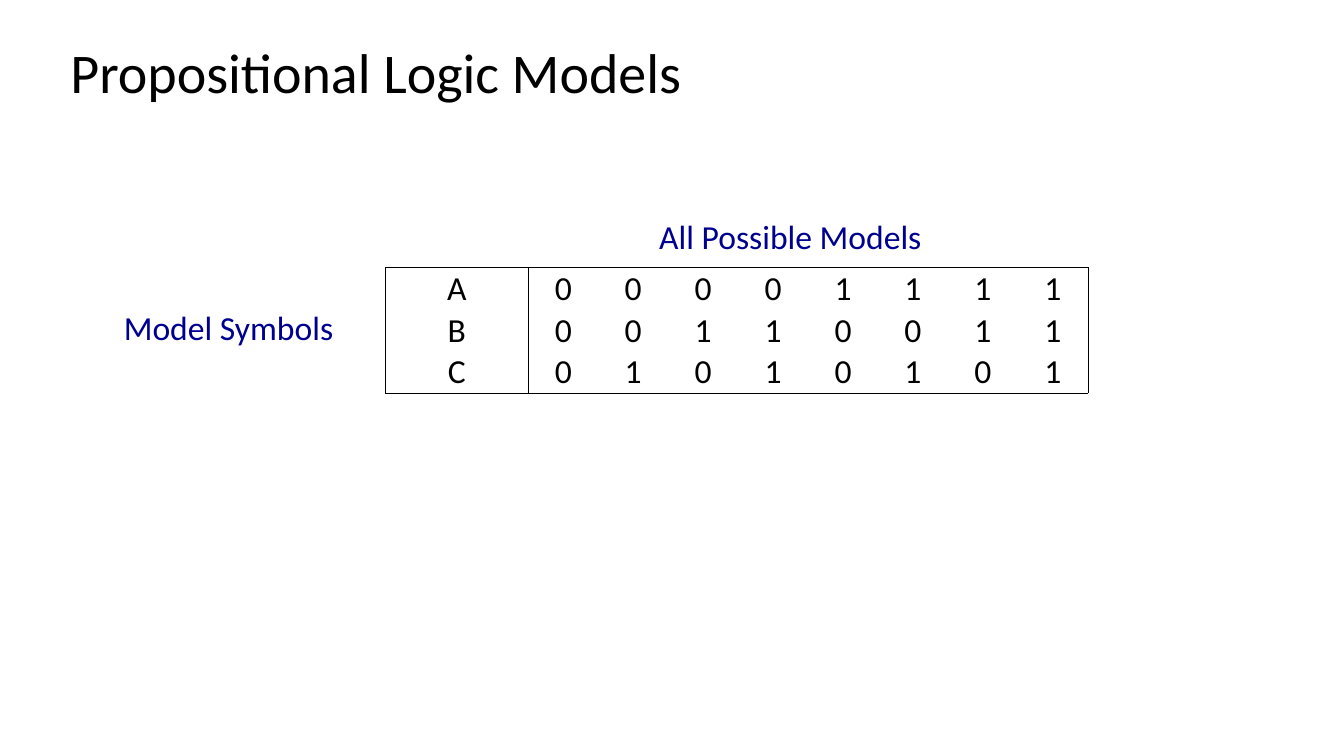
from itertools import product

from lxml import etree
from pptx import Presentation
from pptx.dml.color import RGBColor
from pptx.enum.text import MSO_ANCHOR as Anchor, MSO_AUTO_SIZE as AutoSize, PP_ALIGN as Align
from pptx.oxml.ns import qn
from pptx.util import Inches, Pt

BLACK = RGBColor(0x00, 0x00, 0x00)
NAVY = RGBColor(0x00, 0x00, 0x90)
FONT = "Calibri"
PLAIN_STYLE = "{2D5ABB26-0587-4C30-8999-92F81FD0307C}"

SYMBOLS = "ABC"
MODELS = list(product((0, 1), repeat=len(SYMBOLS)))
SYMBOL_WIDTH = 1.42


def write(para, text, size, color):
    span = para.add_run()
    span.text = text
    for name, value in {"name": FONT, "size": Pt(size)}.items():
        setattr(span.font, name, value)
    span.font.color.rgb = color


def add_text(page, box, text, size, color, frame_format):
    frame = page.shapes.add_textbox(*map(Inches, box)).text_frame
    for name, value in frame_format.items():
        setattr(frame, name, value)
    write(frame.paragraphs[0], text, size, color)
    return frame.paragraphs[0]


def add_title(page, box, text):
    frame_format = {"word_wrap": True, "vertical_anchor": Anchor.MIDDLE}
    para = add_text(page, box, text, 40, BLACK, frame_format)
    para.line_spacing = 0.9


def add_label(page, box, text):
    frame_format = {"word_wrap": False, "auto_size": AutoSize.SHAPE_TO_FIT_TEXT}
    add_text(page, box, text, 24, NAVY, frame_format)


def draw_borders(cell, sides):
    """Draw a thin line on each side named in sides, out of L, R, T and B."""
    properties = cell._tc.get_or_add_tcPr()
    for place, side in enumerate("LRTB"):
        line = etree.Element(qn(f"a:ln{side}"), w=str(Pt(0.5)))
        if side in sides:
            fill = etree.SubElement(line, qn("a:solidFill"))
            etree.SubElement(fill, qn("a:srgbClr"), val=str(BLACK))
        else:
            etree.SubElement(line, qn("a:noFill"))
        properties.insert(place, line)


def add_truth_table(page, box):
    """Place one row per symbol and one column per model."""
    rows, columns = len(SYMBOLS), len(MODELS) + 1
    table = page.shapes.add_table(rows, columns, *map(Inches, box)).table
    table._tbl.tblPr.find(qn("a:tableStyleId")).text = PLAIN_STYLE
    table.first_row = table.horz_banding = False

    model_width = (box[2] - SYMBOL_WIDTH) / len(MODELS)
    for index, column in enumerate(table.columns):
        column.width = Inches(model_width if index else SYMBOL_WIDTH)

    cell_format = {
        "vertical_anchor": Anchor.BOTTOM,
        "margin_left": Inches(0.01),
        "margin_right": Inches(0.01),
        "margin_top": Inches(0.01),
        "margin_bottom": 0,
    }
    for row, column in product(range(rows), range(columns)):
        cell = table.cell(row, column)
        for name, value in cell_format.items():
            setattr(cell, name, value)
        cell.fill.background()
        text = str(MODELS[column - 1][row]) if column else SYMBOLS[row]
        para = cell.text_frame.paragraphs[0]
        para.alignment = Align.CENTER
        write(para, text, 24, BLACK)
        edges = {
            "L": column <= 1,
            "R": column in (0, columns - 1),
            "T": row == 0,
            "B": row == rows - 1,
        }
        draw_borders(cell, [side for side, drawn in edges.items() if drawn])


def main():
    deck = Presentation()
    deck.slide_width, deck.slide_height = Inches(13.33), Inches(7.5)
    page = deck.slides.add_slide(deck.slide_layouts[6])
    add_title(page, (0.6, 0.4, 11.5, 0.69), "Propositional Logic Models")
    add_truth_table(page, (3.82, 2.65, 6.97, 1.25))
    add_label(page, (6.44, 2.09, 3.13, 0.5), "All Possible Models")
    add_label(page, (1.13, 3, 2.5, 0.5), "Model Symbols")
    deck.save("out.pptx")


if __name__ == "__main__":
    main()
